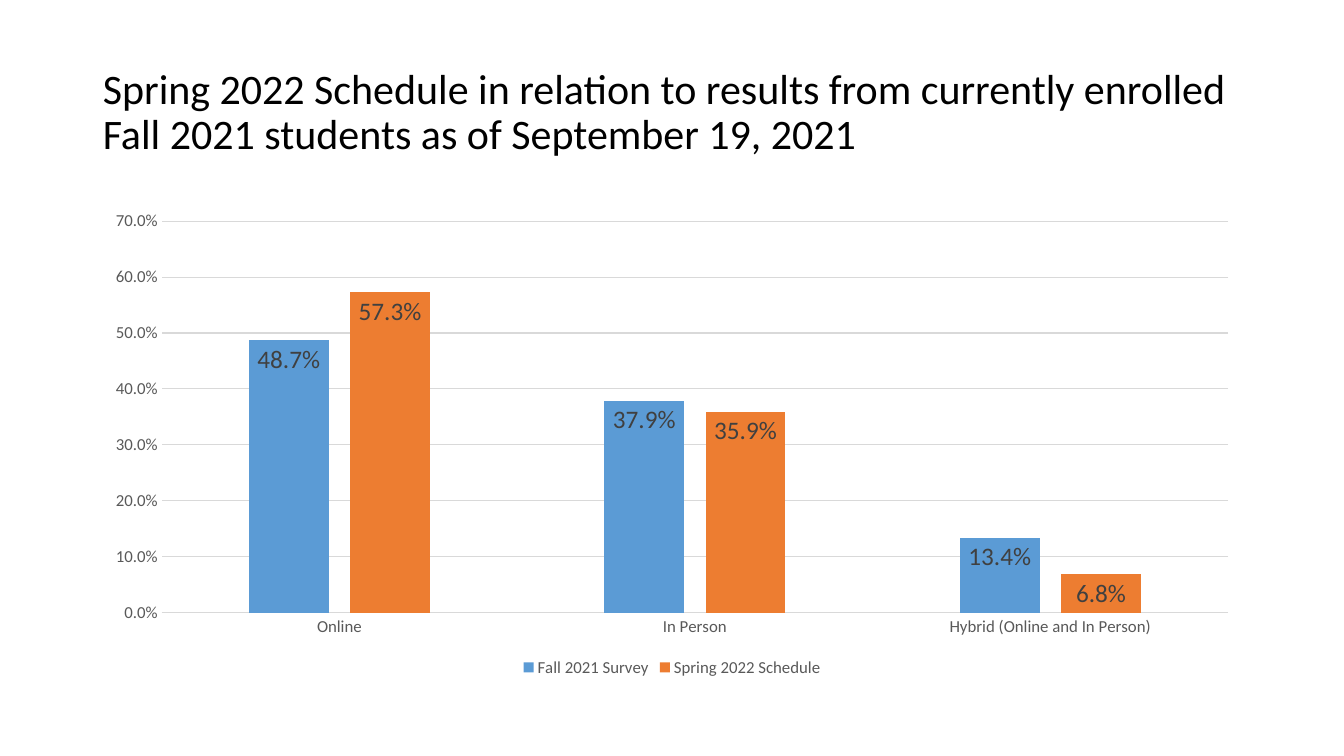
from pptx import Presentation
from pptx.chart.data import CategoryChartData
from pptx.dml.color import RGBColor
from pptx.enum.chart import XL_CHART_TYPE, XL_LABEL_POSITION, XL_LEGEND_POSITION, XL_TICK_MARK
from pptx.enum.text import MSO_ANCHOR, MSO_AUTO_SIZE, PP_ALIGN
from pptx.util import Inches, Pt

TITLE = ("Spring 2022 Schedule in relation to results from currently enrolled "
         "Fall 2021 students as of September 19, 2021")
CATEGORIES = ["Online", "In Person", "Hybrid (Online and In Person)"]
BLUE = RGBColor(0x5B, 0x9B, 0xD5)
ORANGE = RGBColor(0xED, 0x7D, 0x31)
BLACK = RGBColor(0, 0, 0)
LABEL_GRAY = RGBColor(0x40, 0x40, 0x40)
AXIS_GRAY = RGBColor(0x59, 0x59, 0x59)
GRID_GRAY = RGBColor(0xD9, 0xD9, 0xD9)
SERIES = [
    ("Fall 2021 Survey", (0.487, 0.379, 0.134), BLUE),
    ("Spring 2022 Schedule", (0.573, 0.359, 0.068), ORANGE),
]
PERCENT = "0.0%"
FONT_NAME = "Calibri"


def set_attributes(target, values):
    for name, value in values.items():
        setattr(target, name, value)


def style_font(font, size, color):
    set_attributes(font, {"name": FONT_NAME, "size": Pt(size), "bold": False})
    font.color.rgb = color


def style_line(line):
    line.width = Pt(0.75)
    line.color.rgb = GRID_GRAY


def add_title(slide, left, top, width, height):
    title = slide.shapes.title
    set_attributes(title, {"left": left, "top": top, "width": width, "height": height})
    frame = title.text_frame
    frame.text = TITLE
    set_attributes(frame, {"vertical_anchor": MSO_ANCHOR.MIDDLE, "word_wrap": True,
                           "auto_size": MSO_AUTO_SIZE.NONE})
    paragraph = frame.paragraphs[0]
    set_attributes(paragraph, {"alignment": PP_ALIGN.LEFT, "line_spacing": 0.9})
    style_font(paragraph.runs[0].font, 30, BLACK)


def add_schedule_chart(slide, left, top, width, height):
    data = CategoryChartData(number_format=PERCENT)
    data.categories = CATEGORIES
    for name, values, color in SERIES:
        data.add_series(name, values)
    chart = slide.shapes.add_chart(
        XL_CHART_TYPE.COLUMN_CLUSTERED, left, top, width, height, data).chart
    set_attributes(chart, {"has_title": False, "has_legend": True})
    style_font(chart.font, 10, BLACK)
    set_attributes(chart.legend, {"position": XL_LEGEND_POSITION.BOTTOM,
                                  "include_in_layout": False})
    style_font(chart.legend.font, 12, AXIS_GRAY)

    for axis in (chart.category_axis, chart.value_axis):
        set_attributes(axis, {"major_tick_mark": XL_TICK_MARK.NONE,
                              "minor_tick_mark": XL_TICK_MARK.NONE})
        style_font(axis.tick_labels.font, 12, AXIS_GRAY)
    style_line(chart.category_axis.format.line)
    value_axis = chart.value_axis
    set_attributes(value_axis, {"minimum_scale": 0, "maximum_scale": 0.7, "major_unit": 0.1})
    value_axis.format.line.fill.background()
    style_line(value_axis.major_gridlines.format.line)
    number_format = {"number_format": PERCENT, "number_format_is_linked": False}
    set_attributes(value_axis.tick_labels, number_format)

    plot = chart.plots[0]
    set_attributes(plot, {"gap_width": 219, "overlap": -27, "vary_by_categories": False})
    for series, (name, values, color) in zip(plot.series, SERIES):
        series.format.fill.solid()
        series.format.fill.fore_color.rgb = color
        labels = series.data_labels
        set_attributes(labels, {"show_value": True, "position": XL_LABEL_POSITION.INSIDE_END,
                                **number_format})
        style_font(labels.font, 18, LABEL_GRAY)


def main():
    presentation = Presentation()
    set_attributes(presentation, {"slide_width": Inches(13.33), "slide_height": Inches(7.5)})
    slide = presentation.slides.add_slide(presentation.slide_layouts[5])
    left = Inches(0.92)
    width = presentation.slide_width - 2 * left
    add_title(slide, left, Inches(0.4), width, Inches(1.45))
    add_schedule_chart(slide, left, Inches(2), width, Inches(4.76))
    presentation.save("out.pptx")


if __name__ == "__main__":
    main()
